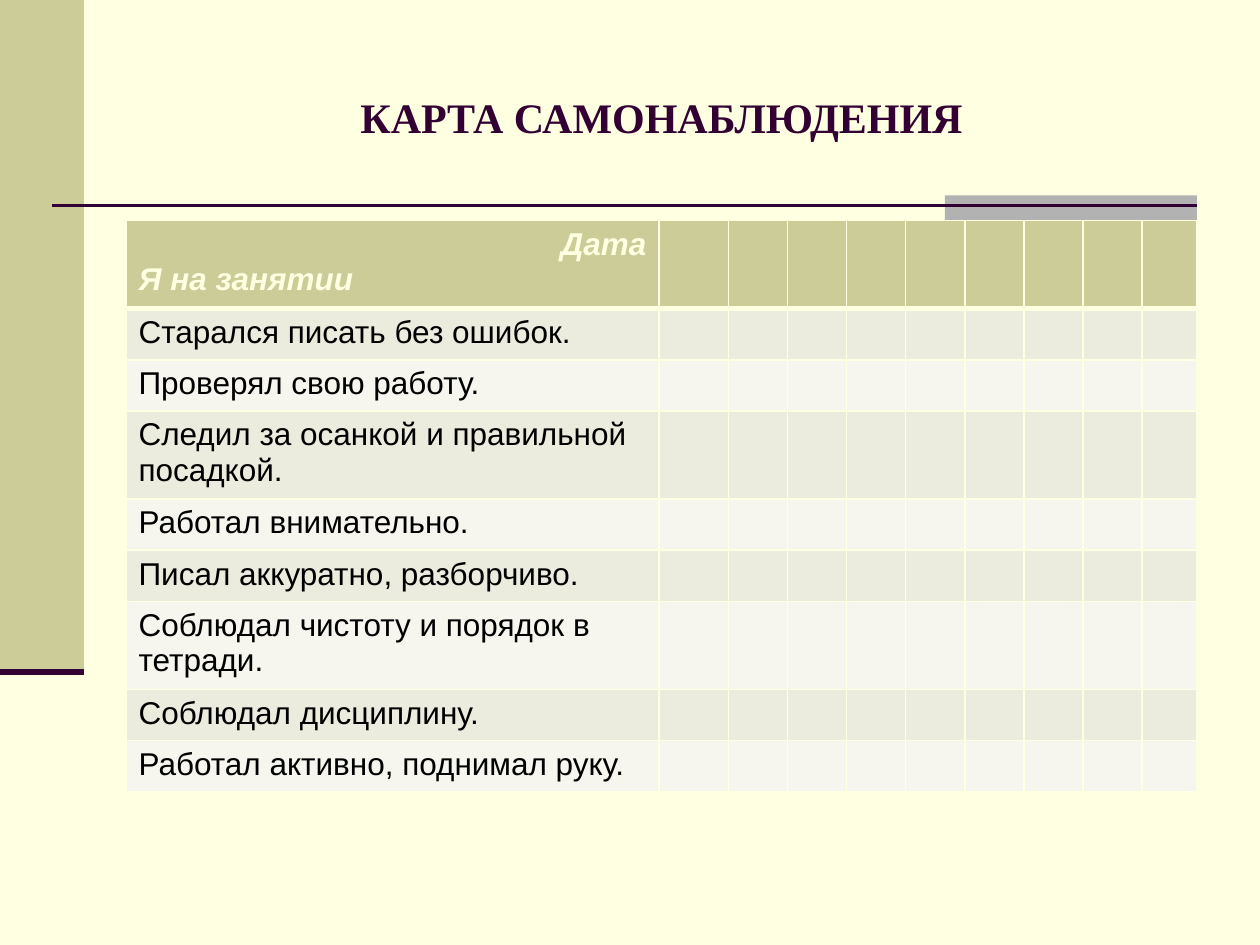
from lxml.etree import SubElement
from pptx import Presentation
from pptx.dml.color import RGBColor as Color
from pptx.enum.shapes import MSO_CONNECTOR as Connector, MSO_SHAPE as Shape
from pptx.enum.text import MSO_ANCHOR as Anchor, PP_ALIGN as Align
from pptx.oxml import parse_xml
from pptx.oxml.ns import nsdecls, qn
from pptx.util import Pt

THEME = {
    "cream": "FFFFE1", "olive": "CCCC99", "plum": "330033", "gray": "B2B2B2",
    "black": "000000", "bands": ("ECECDE", "F6F6EF"),
    "title": {"name": "Times New Roman", "size": Pt(24), "bold": True, "italic": False},
    "header": {"name": "Arial", "size": Pt(18), "bold": True, "italic": True},
    "body": {"name": "Arial", "size": Pt(18), "bold": False, "italic": False},
}
HEADER = (("Дата", Align.RIGHT), ("Я на занятии", Align.LEFT))
HABITS = (
    "Старался писать без ошибок.",
    "Проверял свою работу.",
    "Следил за осанкой и правильной посадкой.",
    "Работал внимательно.",
    "Писал аккуратно, разборчиво.",
    "Соблюдал чистоту и порядок в тетради.",
    "Соблюдал дисциплину.",
    "Работал активно, поднимал руку.",
)
COLUMN_WIDTHS = (304.6, 39.6, *[33.8] * 7, 31.2)
SINGLE_ROW, DOUBLE_ROW = 29.2, 50.4
DOUBLE_ROWS = (0, 3, 6)


class SlideBuilder:
    """Draws themed elements on the current slide, measured in points."""

    def __init__(self, slide, theme):
        self.slide = slide
        self.theme = theme
        self.paint(slide.background.fill, theme["cream"])

    def paint(self, fill, color):
        fill.solid()
        fill.fore_color.rgb = Color.from_string(color)

    def add_text(self, paragraph, text, style, color, align=Align.LEFT):
        paragraph.alignment = align
        run = paragraph.add_run()
        run.text = text
        for name, value in self.theme[style].items():
            setattr(run.font, name, value)
        run.font.color.rgb = Color.from_string(color)

    def block(self, left, top, width, height, color):
        shape = self.slide.shapes.add_shape(
            Shape.RECTANGLE, Pt(left), Pt(top), Pt(width), Pt(height))
        shape.shadow.inherit = False
        self.paint(shape.fill, color)
        shape.line.fill.background()

    def rule(self, left, right, y, weight):
        line = self.slide.shapes.add_connector(
            Connector.STRAIGHT, Pt(left), Pt(y), Pt(right), Pt(y))
        line.line.width = Pt(weight)
        line.line.color.rgb = Color.from_string(self.theme["plum"])
        SubElement(line._element.spPr, qn("a:effectLst"))

    def title(self, text, left, top, width, height):
        title = self.slide.shapes.title
        box = {"left": left, "top": top, "width": width, "height": height}
        for name, value in box.items():
            setattr(title, name, Pt(value))
        title.text_frame.vertical_anchor = Anchor.MIDDLE
        self.add_text(title.text_frame.paragraphs[0], text, "title",
                      self.theme["plum"], Align.CENTER)

    def borders(self, cell, bottom, top):
        properties = cell._tc.get_or_add_tcPr()
        weights = {"lnL": 1, "lnR": 1, "lnT": top, "lnB": bottom}
        for index, (side, weight) in enumerate(weights.items()):
            properties.insert(index, parse_xml(
                f'<a:{side} {nsdecls("a")} w="{Pt(weight)}"><a:solidFill>'
                f'<a:srgbClr val="{self.theme["cream"]}"/></a:solidFill></a:{side}>'))

    def table(self, left, top, header, labels, widths, heights):
        table = self.slide.shapes.add_table(
            len(heights), len(widths), Pt(left), Pt(top),
            Pt(sum(widths)), Pt(sum(heights))).table
        for column, width in zip(table.columns, widths):
            column.width = Pt(width)
        for index, (row, height) in enumerate(zip(table.rows, heights)):
            row.height = Pt(height)
            color = self.theme["bands"][(index - 1) % 2] if index else self.theme["olive"]
            for cell in row.cells:
                self.paint(cell.fill, color)
                self.borders(cell, bottom=1 if index else 3, top=3 if index == 1 else 1)
        frame = table.cell(0, 0).text_frame
        frame.add_paragraph()
        for paragraph, (text, align) in zip(frame.paragraphs, header):
            self.add_text(paragraph, text, "header", self.theme["cream"], align)
        for index, text in enumerate(labels, 1):
            paragraph = table.cell(index, 0).text_frame.paragraphs[0]
            self.add_text(paragraph, text, "body", self.theme["black"])


def main():
    presentation = Presentation()
    presentation.slide_width, presentation.slide_height = Pt(720), Pt(540)
    slide = presentation.slides.add_slide(presentation.slide_layouts[5])
    builder = SlideBuilder(slide, THEME)
    builder.block(0, 0, 48, 384, THEME["olive"])
    builder.block(540, 111.6, 144, 14.4, THEME["gray"])
    builder.rule(30, 684, 117.4, 1.5)
    builder.rule(0, 48, 384, 3.5)
    builder.title("КАРТА САМОНАБЛЮДЕНИЯ", 72, 21.6, 612, 90)
    heights = [DOUBLE_ROW if index in DOUBLE_ROWS else SINGLE_ROW
               for index in range(len(HABITS) + 1)]
    builder.table(72, 126, HEADER, HABITS, COLUMN_WIDTHS, heights)
    presentation.save("out.pptx")


if __name__ == "__main__":
    main()
